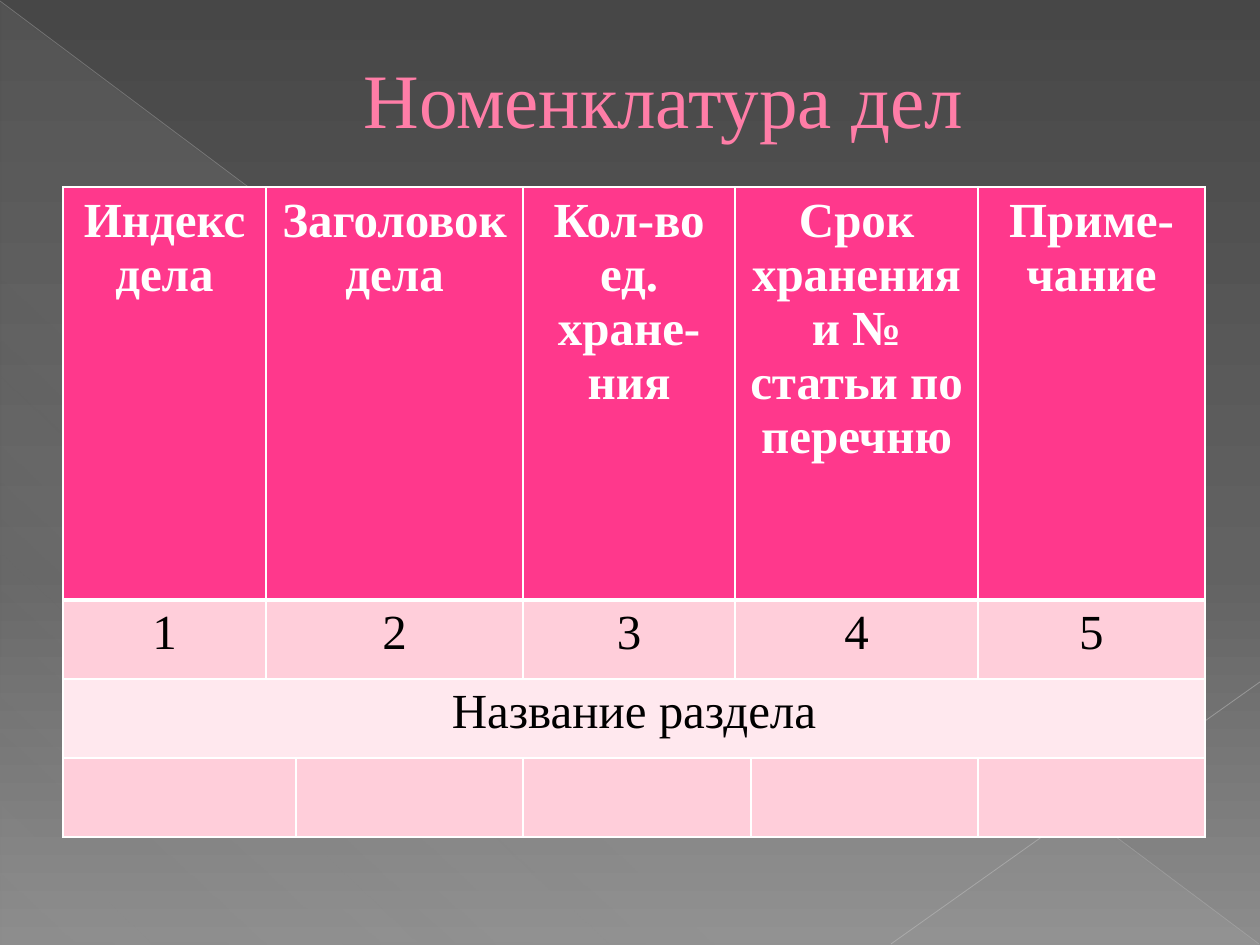
from dataclasses import dataclass

from lxml import etree
from pptx import Presentation
from pptx import util as u
from pptx.dml.color import RGBColor
from pptx.enum import shapes, text
from pptx.oxml import ns

PX = 914400 // 126
FONT = "Times New Roman"
COLORS = {
    "top": "474747", "middle": "626262", "bottom": "8C8C8C",
    "glow": "D2D2D2", "long_line": "BFBFBF", "short_line": "C6C6C6",
    "title": "FF7DA7", "title_edge": "B12761", "header": "FF388C",
    "band": "FFCEDA", "section": "FFE8EE", "white": "FFFFFF", "black": "000000",
}


@dataclass(frozen=True)
class Stop:
    pos: int
    color: str
    alpha: int = 100


@dataclass(frozen=True)
class Line:
    x1: int
    y1: int
    x2: int
    y2: int
    color: str
    width: float
    alpha: int


@dataclass(frozen=True)
class Row:
    height: int
    fill: str
    color: str
    bold: bool
    spans: tuple[int, ...]
    texts: tuple[str, ...]


LINES = (
    Line(0, 1, 1259, 944, "long_line", 0.39, 35),
    Line(1260, 682, 891, 944, "short_line", 0.47, 45),
)
COLS = (203, 24, 227, 212, 16, 227, 227)
HEAD_SPANS = (1, 2, 1, 2, 1)
ROWS = (
    Row(413, "header", "white", True, HEAD_SPANS,
        ("Индекс дела", "Заголовок дела", "Кол-во ед. хране-ния",
         "Срок хранения и № статьи по перечню", "Приме-чание")),
    Row(79, "band", "black", False, HEAD_SPANS, ("1", "2", "3", "4", "5")),
    Row(79, "section", "black", False, (7,), ("Название раздела",)),
    Row(79, "band", "black", False, (2, 1, 2, 1, 1), ("",) * 5),
)


def rgb(name: str) -> RGBColor:
    return RGBColor.from_string(COLORS[name])


def sub(parent, tag: str, **attrs):
    el = etree.SubElement(parent, ns.qn(tag))
    for key, value in attrs.items():
        el.set(key, str(value))
    return el


def add_color(parent, name: str, alpha: int = 100) -> None:
    clr = sub(parent, "a:srgbClr", val=COLORS[name])
    if alpha < 100:
        sub(clr, "a:alpha", val=alpha * 1000)


def set_gradient(parent, stops: tuple[Stop, ...], angle: int) -> None:
    old = parent.find(ns.qn("a:solidFill"))
    grad = etree.Element(ns.qn("a:gradFill"), rotWithShape="1")
    stop_list = sub(grad, "a:gsLst")
    for stop in stops:
        add_color(sub(stop_list, "a:gs", pos=stop.pos * 1000), stop.color, stop.alpha)
    sub(grad, "a:lin", ang=angle * 60000, scaled=0)
    parent.replace(old, grad)


def draw_background(s) -> None:
    s.background.fill.solid()
    bg = s.background.fill._xPr
    set_gradient(bg, (Stop(0, "top"), Stop(60, "middle"), Stop(100, "bottom")), 90)
    sp = s.shapes.add_shape(shapes.MSO_SHAPE.RIGHT_TRIANGLE, PX, 2 * PX, 1259 * PX, 943 * PX)
    sp.shadow.inherit = False
    sp.line.fill.background()
    sp.fill.solid()
    set_gradient(sp._element.spPr,
                 (Stop(0, "glow", 10), Stop(70, "glow", 8), Stop(100, "glow", 1)), 133)


def draw_line(s, line: Line) -> None:
    ends = (v * PX for v in (line.x1, line.y1, line.x2, line.y2))
    cn = s.shapes.add_connector(shapes.MSO_CONNECTOR.STRAIGHT, *ends)
    cn.line.width = u.Pt(line.width)
    cn.line.color.rgb = rgb(line.color)
    clr = cn.line._ln.find(".//" + ns.qn("a:srgbClr"))
    sub(clr, "a:alpha", val=line.alpha * 1000)
    sub(cn._element.spPr, "a:effectLst")


def draw_title(s) -> None:
    tf = s.shapes.add_textbox(63 * PX, 37 * PX, 1134 * PX, 121 * PX).text_frame
    tf.word_wrap = True
    tf.vertical_anchor = text.MSO_ANCHOR.MIDDLE
    p = tf.paragraphs[0]
    p.alignment = text.PP_ALIGN.CENTER
    p._p.get_or_add_pPr().set("marL", str(67 * PX))
    r = p.add_run()
    r.text = "Номенклатура дел"
    r.font.name = FONT
    r.font.size = u.Pt(44)
    r.font.color.rgb = rgb("title")
    ln = etree.Element(ns.qn("a:ln"), w=str(u.Pt(0.5)))
    add_color(sub(ln, "a:solidFill"), "title_edge")
    r._r.get_or_add_rPr().insert(0, ln)


def set_borders(cell, top: int, bottom: int) -> None:
    tc_pr = cell._tc.get_or_add_tcPr()
    widths = {"a:lnL": 1, "a:lnR": 1, "a:lnT": top, "a:lnB": bottom}
    for i, (tag, width) in enumerate(widths.items()):
        ln = etree.Element(ns.qn(tag), w=str(u.Pt(width)))
        add_color(sub(ln, "a:solidFill"), "white")
        tc_pr.insert(i, ln)


def fill_cell(cell, row: Row, label: str) -> None:
    p = cell.text_frame.paragraphs[0]
    p.alignment = text.PP_ALIGN.CENTER
    p.font.name = FONT
    p.font.size = u.Pt(28)
    p.font.bold = row.bold
    p.font.color.rgb = rgb(row.color)
    if label:
        p.add_run().text = label


def draw_table(s) -> None:
    height = sum(row.height for row in ROWS)
    tbl = s.shapes.add_table(len(ROWS), len(COLS), 63 * PX, 187 * PX,
                             sum(COLS) * PX, height * PX).table
    for col, width in zip(tbl.columns, COLS):
        col.width = width * PX
    for i, row in enumerate(ROWS):
        tbl.rows[i].height = row.height * PX
        for j in range(len(COLS)):
            cell = tbl.cell(i, j)
            cell.fill.solid()
            cell.fill.fore_color.rgb = rgb(row.fill)
            set_borders(cell, 3 if i == 1 else 1, 3 if i == 0 else 1)
        start = 0
        for span, label in zip(row.spans, row.texts):
            cell = tbl.cell(i, start)
            if span > 1:
                cell.merge(tbl.cell(i, start + span - 1))
            fill_cell(cell, row, label)
            start += span


def main() -> None:
    prs = Presentation()
    prs.slide_width, prs.slide_height = u.Inches(10), u.Inches(7.5)
    s = prs.slides.add_slide(prs.slide_layouts[6])
    draw_background(s)
    for line in LINES:
        draw_line(s, line)
    draw_title(s)
    draw_table(s)
    prs.save("out.pptx")


if __name__ == "__main__":
    main()
